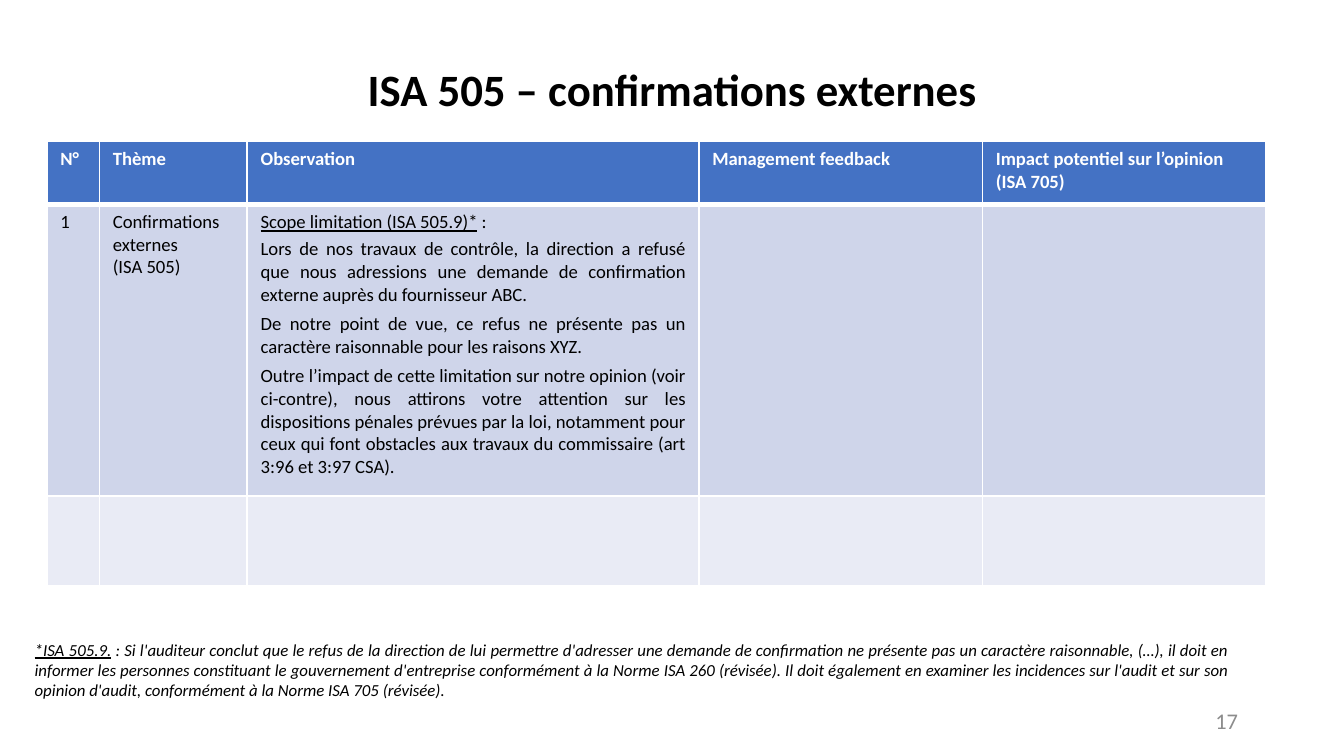
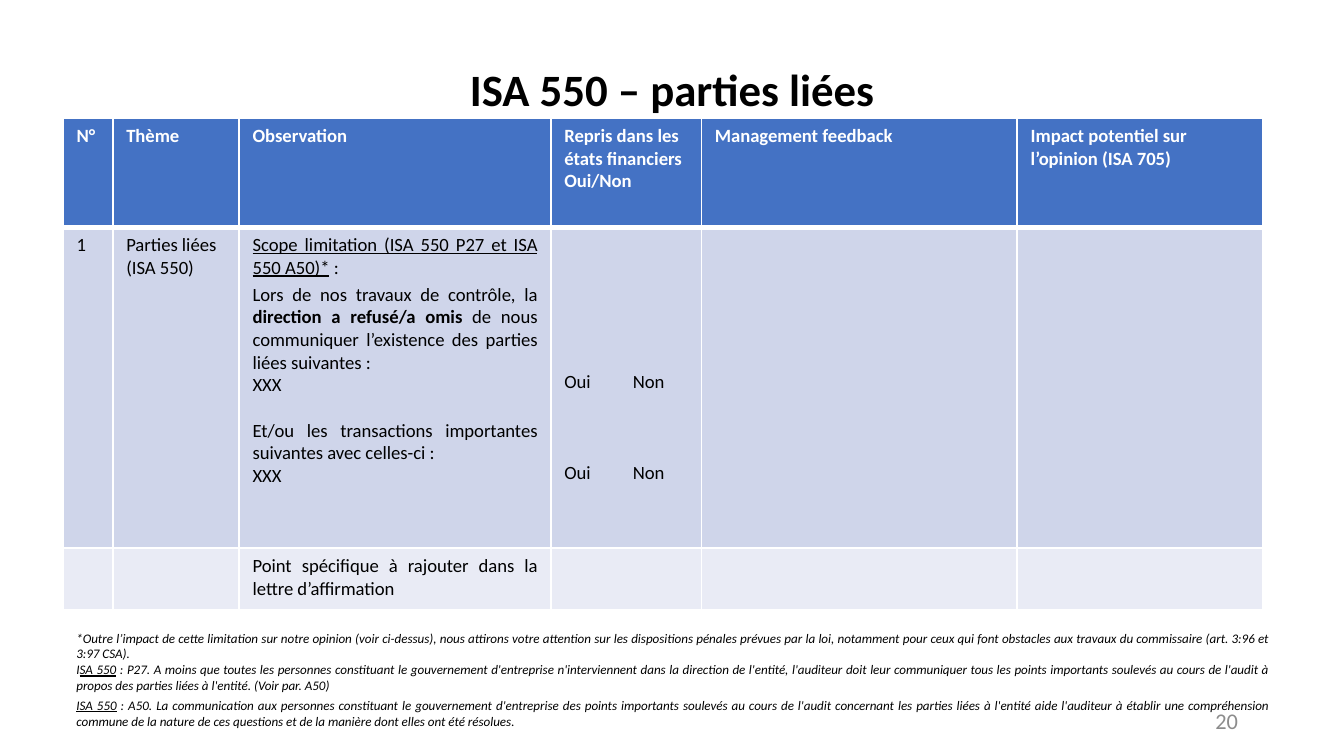
from lxml import etree
from pptx import Presentation
from pptx import util as u
from pptx.dml.color import RGBColor
from pptx.enum import text
from pptx.oxml import ns

FONT = "Calibri"
BLACK, WHITE, GREY = "000000", "FFFFFF", "8C8C8C"
HEADER_FILL, BODY_FILLS = "4472C4", ["CFD5EA", "E9EBF5"]
LEFT, CENTER = text.PP_ALIGN.LEFT, text.PP_ALIGN.CENTER
RIGHT, JUSTIFY = text.PP_ALIGN.RIGHT, text.PP_ALIGN.JUSTIFY
TOP, MIDDLE = text.MSO_ANCHOR.TOP, text.MSO_ANCHOR.MIDDLE
LINE = 12.2  # points taken by one line of table text
UNDER, BOLD = {"underline": True}, {"bold": True}


def write(frame, paragraphs, size, color=BLACK, align=LEFT, **style):
    """Fill a frame; a paragraph is a string or (points before, *runs),
    and a run is a string or (text, format values)."""
    frame.word_wrap = True
    for index, content in enumerate(paragraphs):
        para = frame.add_paragraph() if index else frame.paragraphs[0]
        para.alignment = align
        before, *runs = (0, content) if isinstance(content, str) else content
        if before:
            para.space_before = u.Pt(before)
        for run in runs:
            words, extra = (run, {}) if isinstance(run, str) else run
            span = para.add_run()
            span.text = words
            span.font.color.rgb = RGBColor.from_string(color)
            values = {"name": FONT, "size": u.Pt(size), **style, **extra}
            for name, value in values.items():
                setattr(span.font, name, value)


def add_text(page, place, paragraphs, size, anchor=TOP, **style):
    box = page.shapes.add_textbox(*[u.Inches(n) for n in place])
    write(box.text_frame, paragraphs, size, **style)
    box.text_frame.vertical_anchor = anchor
    return box


pages = [
    {
        "title": "ISA 505 – confirmations externes",
        "number": "17",
        "corner": (0.35, 1.05),
        "columns": [0.39, 1.1, 3.36, 2.11, 2.11],
        "rows": [0.47, 2.17, 0.67],
        "cells": [
            [["N°"], ["Thème"], ["Observation"], ["Management feedback"],
             ["Impact potentiel sur l’opinion (ISA 705)"]],
            [["1"], ["Confirmations externes", "(ISA 505)"], [
                (0, ("Scope limitation (ISA 505.9)*", UNDER), " : "),
                (2.4, "Lors de nos travaux de contrôle, la direction a refusé que nous "
                      "adressions une demande de confirmation externe auprès du "
                      "fournisseur ABC."),
                (3.7, "De notre point de vue, ce refus ne présente pas un caractère "
                      "raisonnable pour les raisons XYZ."),
                (3.7, "Outre l’impact de cette limitation sur notre opinion (voir "
                      "ci-contre), nous attirons votre attention sur les dispositions "
                      "pénales prévues par la loi, notamment pour ceux qui font "
                      "obstacles aux travaux du commissaire (art 3:96 et 3:97 CSA)."),
            ], [], []],
            [[], [], [], [], []],
        ],
        "note_place": (0.16, 4.71, 9.07, 0.86),
        "note_size": 9,
        "note": [
            (0, ("*ISA 505.9.", UNDER),
             " : Si l'auditeur conclut que le refus de la direction de lui permettre "
             "d'adresser une demande de confirmation ne présente pas un caractère "
             "raisonnable, (…), il doit en informer les personnes constituant le "
             "gouvernement d'entreprise conformément à la Norme ISA 260 (révisée). Il "
             "doit également en examiner les incidences sur l'audit et sur son opinion "
             "d'audit, conformément à la Norme ISA 705 (révisée)."),
        ],
    },
    {
        "title": "ISA 550 – parties liées",
        "number": "20",
        "corner": (0.47, 0.88),
        "columns": [0.37, 0.94, 2.32, 1.12, 2.35, 1.83],
        "rows": [0.81, 2.39, 0.46],
        "cells": [
            [["N°"], ["Thème"], ["Observation"],
             ["Repris dans les états financiers", "Oui/Non"],
             ["Management feedback"], ["Impact potentiel sur l’opinion (ISA 705)"]],
            [["1"], ["Parties liées", "(ISA 550)"], [
                (0, ("Scope limitation (ISA 550 P27 et ISA 550 A50)*", UNDER), " : "),
                (2.4, "Lors de nos travaux de contrôle, la ",
                 ("direction a refusé/a omis ", BOLD),
                 "de nous communiquer l’existence des parties liées suivantes :"),
                "XXX",
                (LINE, "Et/ou les transactions importantes suivantes avec celles-ci :"),
                "XXX",
            ], ["Oui\tNon", (3 * LINE, "Oui\tNon")], [], []],
            [[], [], ["Point spécifique à rajouter dans la lettre d’affirmation"],
             [], [], []],
        ],
        "note_place": (0.47, 4.64, 9.07, 1.14),
        "note_size": 7,
        "note": [
            "*Outre l’impact de cette limitation sur notre opinion (voir ci-dessus), nous "
            "attirons votre attention sur les dispositions pénales prévues par la loi, "
            "notamment pour ceux qui font obstacles aux travaux du commissaire (art. 3:96 "
            "et 3:97 CSA).",
            (0, "I", ("SA 550", UNDER),
             " : P27. A moins que toutes les personnes constituant le gouvernement "
             "d'entreprise n'interviennent dans la direction de l'entité, l'auditeur doit "
             "leur communiquer tous les points importants soulevés au cours de l'audit à "
             "propos des parties liées à l'entité. (Voir par. A50)"),
            (2.4, ("ISA 550", UNDER),
             " : A50. La communication aux personnes constituant le gouvernement "
             "d'entreprise des points importants soulevés au cours de l'audit concernant "
             "les parties liées à l'entité aide l'auditeur à établir une compréhension "
             "commune de la nature de ces questions et de la manière dont elles ont été "
             "résolues."),
        ],
    },
]

deck = Presentation()
deck.slide_width, deck.slide_height = u.Inches(10), u.Inches(10 * 9 / 16)

for content in pages:
    page = deck.slides.add_slide(deck.slide_layouts[6])
    add_text(page, (7.06, 5.21, 2.25, 0.3), [content["number"]], 12, MIDDLE,
             color=GREY, align=RIGHT)

    columns, rows = content["columns"], content["rows"]
    place = (*content["corner"], sum(columns), sum(rows))
    table = page.shapes.add_table(len(rows), len(columns),
                                  *[u.Inches(n) for n in place]).table
    for column, width in zip(table.columns, columns):
        column.width = u.Inches(width)
    for r, height in enumerate(rows):
        table.rows[r].height = u.Inches(height)
        for c, paragraphs in enumerate(content["cells"][r]):
            cell = table.cell(r, c)
            borders = cell._tc.get_or_add_tcPr()
            for side in "LRTB":
                thick = (side, r) in [("B", 0), ("T", 1)]
                line = etree.SubElement(borders, ns.qn("a:ln" + side),
                                        w=str(u.Pt(3 if thick else 1)))
                paint = etree.SubElement(line, ns.qn("a:solidFill"))
                etree.SubElement(paint, ns.qn("a:srgbClr"), val=WHITE)
            cell.fill.solid()
            fill = BODY_FILLS[r - 1] if r else HEADER_FILL
            cell.fill.fore_color.rgb = RGBColor.from_string(fill)
            write(cell.text_frame, paragraphs, 10, BLACK if r else WHITE,
                  JUSTIFY if r and c == 2 else LEFT, bold=r == 0)
            if paragraphs and paragraphs[0] == "Oui\tNon":
                cell.margin_top = u.Inches(0.05) + u.Pt(6 * LINE)
                for para in cell.text_frame.paragraphs:
                    props = para._p.get_or_add_pPr()
                    tabs = etree.SubElement(props, ns.qn("a:tabLst"))
                    etree.SubElement(tabs, ns.qn("a:tab"),
                                     pos=str(u.Inches(0.51)), algn="l")

    note = add_text(page, content["note_place"], content["note"],
                    content["note_size"], align=JUSTIFY, italic=True)
    note.text_frame.auto_size = text.MSO_AUTO_SIZE.SHAPE_TO_FIT_TEXT
    title = add_text(page, (0.69, 0.14, 8.62, 1.09), [content["title"]], 24, MIDDLE,
                     align=CENTER, bold=True)
    title.text_frame.paragraphs[0].line_spacing = 0.9

deck.save("out.pptx")
